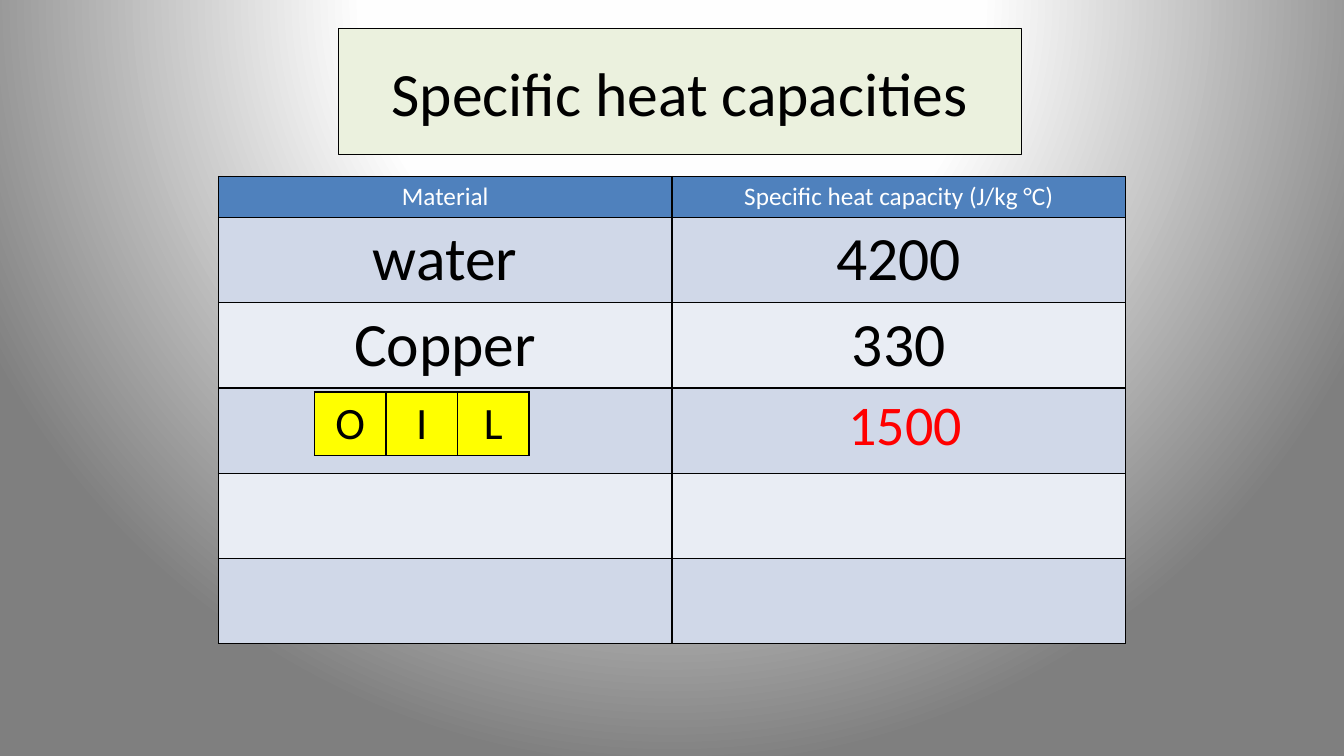
from pptx import Presentation
from pptx.dml.color import RGBColor
from pptx.enum.text import MSO_ANCHOR, PP_ALIGN
from pptx.oxml import parse_xml
from pptx.oxml.ns import nsdecls, qn
from pptx.util import Pt

CENTER = PP_ALIGN.CENTER
MIDDLE = MSO_ANCHOR.MIDDLE

BLACK = RGBColor(0x00, 0x00, 0x00)
WHITE = RGBColor(0xFF, 0xFF, 0xFF)
RED = RGBColor(0xFF, 0x00, 0x00)
YELLOW = RGBColor(0xFF, 0xFF, 0x00)
PALE_GREEN = RGBColor(0xEB, 0xF1, 0xDE)
HEADER_BLUE = RGBColor(0x4F, 0x81, 0xBD)
BANDS = [RGBColor(0xD0, 0xD8, 0xE8), RGBColor(0xE9, 0xED, 0xF4)]
NEAR_WHITE = RGBColor(0xFE, 0xFE, 0xFE)
GREY = RGBColor(0x7F, 0x7F, 0x7F)

FONT = "Calibri"
HEADINGS = ("Material", "Specific heat capacity (J/kg °C)")
MATERIALS = [("water", "4200"), ("Copper", "330"), ("", ""), ("", ""), ("", "")]
HEADER_HEIGHT = 29.2


def set_background(s):
    """Fill the background with a circular gradient centred above the slide."""
    fill = s.background.fill
    fill.gradient()
    stops = "".join(
        f'<a:gs pos="{pos * 1000}"><a:srgbClr val="{color}"/></a:gs>'
        for pos, color in ((0, WHITE), (40, NEAR_WHITE), (100, GREY))
    )
    grad = s.element.find(".//" + qn("a:gradFill"))
    grad.getparent().replace(grad, parse_xml(
        f'<a:gradFill {nsdecls("a")} rotWithShape="1"><a:gsLst>{stops}</a:gsLst>'
        '<a:path path="circle"><a:fillToRect l="50000" t="-80000" r="50000" b="180000"/>'
        '</a:path></a:gradFill>'))


def write(tf, text, size, color):
    tf.text = text
    p = tf.paragraphs[0]
    p.alignment = CENTER
    for r in p.runs:
        r.font.name = FONT
        r.font.size = Pt(size)
        r.font.bold = False
        r.font.color.rgb = color


def format_cell(cell, text, size, color, fill):
    write(cell.text_frame, text, size, color)
    tcPr = cell._tc.get_or_add_tcPr()
    for side in ("lnL", "lnR", "lnT", "lnB"):
        tcPr.append(parse_xml(
            f'<a:{side} {nsdecls("a")} w="{Pt(1)}"><a:solidFill>'
            f'<a:srgbClr val="{BLACK}"/></a:solidFill></a:{side}>'))
    cell.fill.solid()
    cell.fill.fore_color.rgb = fill


def add_title(s, x, y, w, h):
    sp = s.shapes.title
    sp.left, sp.top, sp.width, sp.height = Pt(x), Pt(y), Pt(w), Pt(h)
    sp.fill.solid()
    sp.fill.fore_color.rgb = PALE_GREEN
    sp.line.color.rgb = BLACK
    sp.line.width = Pt(0.75)
    sp.text_frame.vertical_anchor = MIDDLE
    write(sp.text_frame, "Specific heat capacities", 44, BLACK)


def add_capacity_table(s, x, y, w, h):
    rows = [HEADINGS] + MATERIALS
    table = s.shapes.add_table(len(rows), 2, Pt(x), Pt(y), Pt(w), Pt(h)).table
    for i, values in enumerate(rows):
        if i == 0:
            height, style = HEADER_HEIGHT, (18, WHITE, HEADER_BLUE)
        else:
            height = (h - HEADER_HEIGHT) / len(MATERIALS)
            style = (44, BLACK, BANDS[(i - 1) % 2])
        table.rows[i].height = Pt(height)
        for j, value in enumerate(values):
            format_cell(table.cell(i, j), value, *style)


def add_letter_tiles(s, word, x, y, w, h):
    table = s.shapes.add_table(1, len(word), Pt(x), Pt(y), Pt(w), Pt(h)).table
    for j, letter in enumerate(word):
        format_cell(table.cell(0, j), letter, 32, BLACK, YELLOW)


def add_oil_capacity(s, x, y, w, h):
    tf = s.shapes.add_textbox(Pt(x), Pt(y), Pt(w), Pt(h)).text_frame
    tf.word_wrap = True
    write(tf, "1500", 40, RED)


def main():
    prs = Presentation()
    prs.slide_width, prs.slide_height = Pt(960), Pt(540)
    s = prs.slides.add_slide(prs.slide_layouts[5])
    set_background(s)
    add_title(s, 242, 20.5, 487.5, 90)
    add_capacity_table(s, 156, 126, 648, 333.7)
    add_oil_capacity(s, 592.5, 275, 108, 55.5)
    add_letter_tiles(s, "OIL", 224.6, 280, 153.3, 45.5)
    prs.save("out.pptx")


if __name__ == "__main__":
    main()
